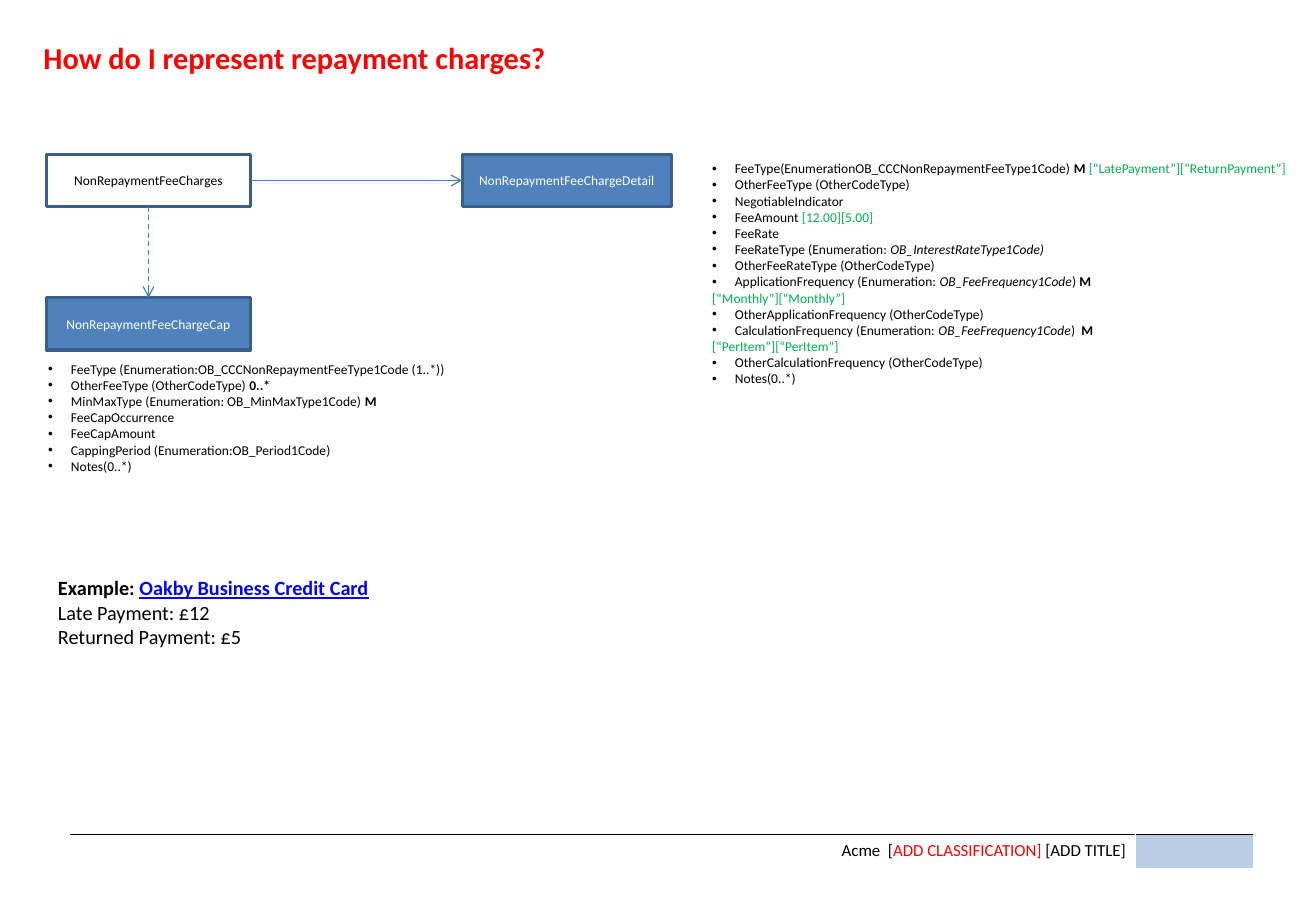
import pptx
import pptx.util
import pptx.dml.color
import pptx.enum.dml
import pptx.enum.shapes
import pptx.enum.text
import pptx.oxml
import pptx.oxml.ns
from dataclasses import dataclass

Pt = pptx.util.Pt
Align = pptx.enum.text.PP_ALIGN


@dataclass(frozen=True)
class Theme:
    """Hold the colours, font and type sizes of the slide."""
    face: str = "Calibri"
    head: int = 18
    body: int = 12
    foot: int = 10
    note: int = 8
    ink: str = "000000"
    red: str = "FF0000"
    green: str = "00B050"
    link: str = "0000FF"
    white: str = "FFFFFF"
    blue: str = "4F81BD"
    edge: str = "3A5F8C"
    wire: str = "4B7EBC"
    pale: str = "B9CDE5"


THEME = Theme()
BOLD = {"bold": True}
SLANT = {"italic": True}
GREEN = {"color": THEME.green}
RED = {"color": THEME.red}
LINK = {"color": THEME.link, "bold": True, "underline": True}

DETAIL = [
    ["FeeType(EnumerationOB_CCCNonRepaymentFeeType1Code) ", ("M ", BOLD),
     ("[“LatePayment”][“ReturnPayment”]", GREEN)],
    ["OtherFeeType (OtherCodeType)"],
    ["NegotiableIndicator"],
    ["FeeAmount ", ("[12.00][5.00]", GREEN)],
    ["FeeRate"],
    ["FeeRateType (Enumeration: ", ("OB_InterestRateType1Code)", SLANT)],
    ["OtherFeeRateType (OtherCodeType)"],
    ["ApplicationFrequency (Enumeration: ", ("OB_FeeFrequency1Code", SLANT), ") ", ("M", BOLD)],
    [("[“Monthly”][“Monthly”]", GREEN)],
    ["OtherApplicationFrequency (OtherCodeType)"],
    ["CalculationFrequency (Enumeration: ", ("OB_FeeFrequency1Code", SLANT), ")  ", ("M", BOLD)],
    [("[“PerItem”][“PerItem”]", GREEN)],
    ["OtherCalculationFrequency (OtherCodeType)"],
    ["Notes(0..*)"],
]
CAP = [
    ["FeeType (Enumeration:OB_CCCNonRepaymentFeeType1Code (1..*))"],
    ["OtherFeeType (OtherCodeType) ", ("0..*", BOLD)],
    ["MinMaxType (Enumeration: OB_MinMaxType1Code) ", ("M", BOLD)],
    ["FeeCapOccurrence"],
    ["FeeCapAmount"],
    ["CappingPeriod (Enumeration:OB_Period1Code)"],
    ["Notes(0..*)"],
]
SAMPLE = [
    [("Example: ", BOLD), ("Oakby Business Credit Card", LINK)],
    ["Late Payment: £12"],
    ["Returned Payment: £5"],
]
FOOTER = [["Acme  [", ("ADD CLASSIFICATION] ", RED), "[ADD TITLE]"]]


def hue(code):
    """Turn a hex code into a colour."""
    return pptx.dml.color.RGBColor.from_string(code)


def node(tag, attrs=""):
    """Make one drawing element with the given attributes."""
    return pptx.oxml.parse_xml(f'<a:{tag} {pptx.oxml.ns.nsdecls("a")} {attrs}/>')


def put(item, values):
    """Set each named value on an item."""
    for name, value in values.items():
        setattr(item, name, value)


def write(frame, lines, size, color=THEME.ink, align=Align.LEFT, bullet=False):
    """Fill a text frame with lines of plain or styled parts."""
    for index, parts in enumerate(lines):
        para = frame.paragraphs[0] if index == 0 else frame.add_paragraph()
        para.alignment = align
        if bullet and isinstance(parts[0], str):
            props = para._p.get_or_add_pPr()
            props.set("marL", str(Pt(13.5)))
            props.set("indent", str(-Pt(13.5)))
            props.append(node("buFont", 'typeface="Arial"'))
            props.append(node("buChar", 'char="•"'))
        for part in parts:
            text, style = (part, {}) if isinstance(part, str) else part
            look = {"name": THEME.face, "size": Pt(size), "color": color, **style}
            run = para.add_run()
            run.text = text
            run.font.color.rgb = hue(look.pop("color"))
            put(run.font, look)


def label(slide, box, lines, size, wrap=False, **look):
    """Place a text box in the given box."""
    frame = slide.shapes.add_textbox(*map(Pt, box)).text_frame
    put(frame, {"word_wrap": wrap,
                "auto_size": pptx.enum.text.MSO_AUTO_SIZE.SHAPE_TO_FIT_TEXT})
    write(frame, lines, size, **look)


def entity(slide, box, name, solid=True):
    """Draw a named entity, filled or hollow."""
    shape = slide.shapes.add_shape(pptx.enum.shapes.MSO_SHAPE.RECTANGLE, *map(Pt, box))
    shape.shadow.inherit = False
    if solid:
        shape.fill.solid()
        shape.fill.fore_color.rgb = hue(THEME.blue)
    else:
        shape.fill.background()
    shape.line.color.rgb = hue(THEME.edge)
    shape.line.width = Pt(2)
    frame = shape.text_frame
    put(frame, {"word_wrap": True, "vertical_anchor": pptx.enum.text.MSO_ANCHOR.MIDDLE})
    write(frame, [[name]], THEME.note, THEME.white if solid else THEME.ink, Align.CENTER)


def arrow(slide, start, end, dash=False):
    """Draw an open arrow between two points."""
    kind = pptx.enum.shapes.MSO_CONNECTOR.STRAIGHT
    wire = slide.shapes.add_connector(kind, *map(Pt, (*start, *end)))
    wire.line.color.rgb = hue(THEME.wire)
    wire.line.width = Pt(0.75)
    if dash:
        wire.line.dash_style = pptx.enum.dml.MSO_LINE.DASH
    wire.line._get_or_add_ln().append(node("tailEnd", 'type="arrow"'))
    wire._element.spPr.append(node("effectLst"))


def model(slide, box):
    """Draw the entities, their arrows and their field lists."""
    left, top, width, height = box
    wide, tall, far, drop = 121, 31, 246.5, 85
    entity(slide, (left, top, wide, tall), "NonRepaymentFeeCharges", solid=False)
    entity(slide, (left + far, top, width - far, tall), "NonRepaymentFeeChargeDetail")
    entity(slide, (left, top + drop, wide, tall), "NonRepaymentFeeChargeCap")
    arrow(slide, (left + wide / 2, top + tall), (left + wide / 2, top + drop), dash=True)
    arrow(slide, (left + wide, top + tall / 2), (left + far, top + tall / 2))
    label(slide, (left + width + 17, top, 359.3, 143.3), DETAIL, THEME.note, bullet=True)
    label(slide, (left - 6, top + height, 254.2, 75), CAP, THEME.note, bullet=True)


def footer(slide, box):
    """Draw the footer table with a rule along its top."""
    left, top, width, height = box
    table = slide.shapes.add_table(1, 2, *map(Pt, box)).table
    put(table, {"first_row": False, "horz_banding": False})
    tab = 70
    for column, size in zip(table.columns, (width - tab, tab)):
        column.width = Pt(size)
    title, block = table.rows[0].cells
    for cell in (title, block):
        put(cell, {"margin_left": Pt(5.76), "margin_right": Pt(5.76),
                   "margin_top": Pt(3.6), "margin_bottom": Pt(3.6)})
        rule = node("lnT", f'w="{Pt(1)}"')
        fill = node("solidFill")
        fill.append(node("srgbClr", f'val="{THEME.ink}"'))
        rule.append(fill)
        cell._tc.get_or_add_tcPr().insert(0, rule)
    title.fill.background()
    block.fill.solid()
    block.fill.fore_color.rgb = hue(THEME.pale)
    write(title.text_frame, FOOTER, THEME.foot, align=Align.RIGHT)
    blank = block.text_frame.paragraphs[0]._p
    blank.append(node("endParaRPr", f'sz="{THEME.foot * 100}"'))


def main():
    """Build and save the slide."""
    deck = pptx.Presentation()
    put(deck, {"slide_width": Pt(780), "slide_height": Pt(540)})
    slide = deck.slides.add_slide(deck.slide_layouts[6])
    footer(slide, (41, 494.5, 702, 20.5))
    label(slide, (18.7, 19.4, 314.6, 29), [[("How do I represent repayment charges?", BOLD)]],
          THEME.head, color=THEME.red)
    label(slide, (27.3, 337.7, 731, 65.5), SAMPLE, THEME.body, wrap=True)
    model(slide, (27.5, 91.5, 370.5, 118.8))
    deck.save("out.pptx")


if __name__ == "__main__":
    main()
